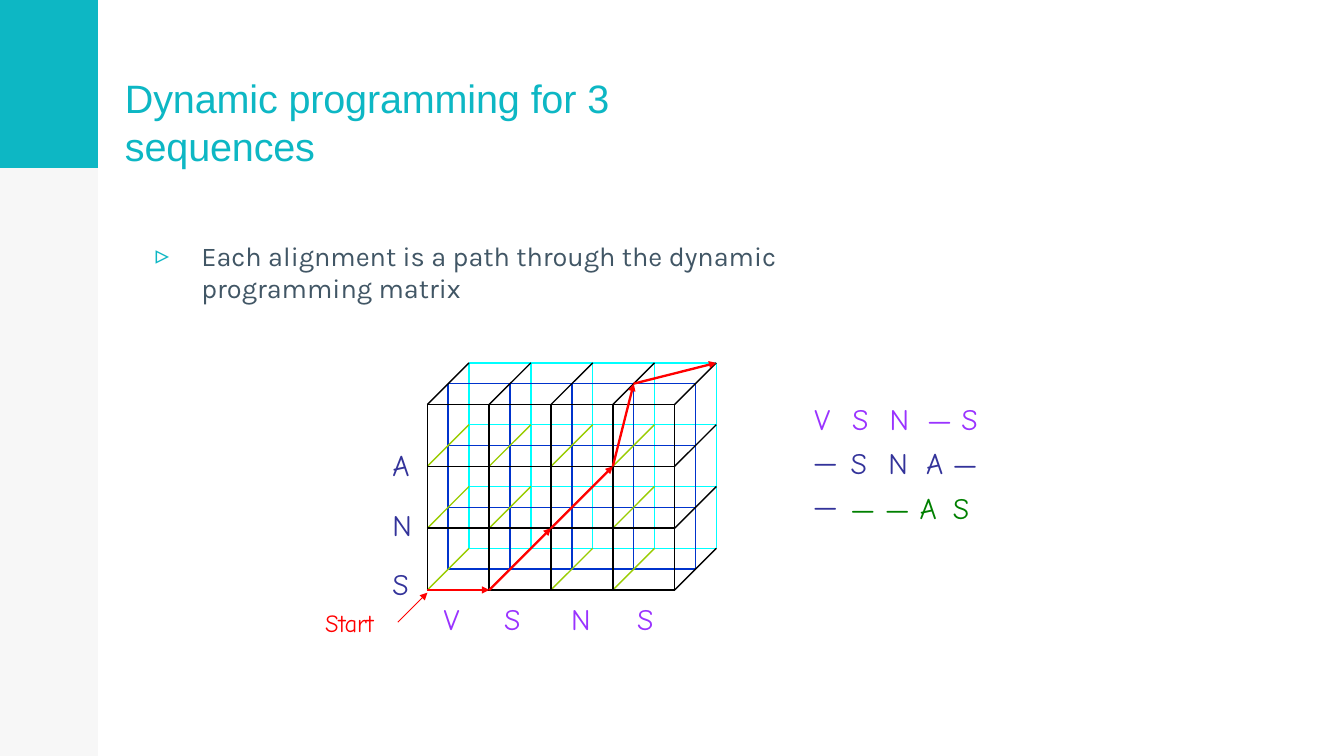
from lxml.etree import SubElement
from pptx import Presentation
from pptx.dml.color import RGBColor
from pptx.enum.shapes import MSO_CONNECTOR as CONN, MSO_SHAPE as SHAPE
from pptx.enum.text import MSO_ANCHOR as ANCHOR, PP_ALIGN as ALIGN
from pptx.oxml.ns import qn
from pptx.util import Inches, Pt

W = 10
H = W * 9 / 16
TEAL, SLATE, RED, BLACK = "0DB7C4", "415665", "FF0000", "000000"
PURPLE, INDIGO, GREEN = "9A33FF", "33339A", "008000"
CYAN, BLUE, LIME = "00FFFF", "0033CC", "99CC00"
HAND = "Comic Neue"


def rgb(color):
    return RGBColor.from_string(color)


def add_rect(slide, box, color, alpha=None):
    sp = slide.shapes.add_shape(SHAPE.RECTANGLE, *map(Inches, box))
    sp.shadow.inherit = False
    sp.fill.solid()
    sp.fill.fore_color.rgb = rgb(color)
    sp.line.fill.background()
    if alpha:
        clr = sp.fill._xPr.find(".//" + qn("a:srgbClr"))
        SubElement(clr, qn("a:alpha")).set("val", str(alpha * 1000))


def add_line(slide, start, end, color, width=0.75, arrow=False):
    ln = slide.shapes.add_connector(CONN.STRAIGHT, *map(Inches, start + end))
    ln.line.color.rgb = rgb(color)
    ln.line.width = Pt(width)
    if arrow:
        head = SubElement(ln.line._get_or_add_ln(), qn("a:tailEnd"))
        for key, val in (("type", "triangle"), ("w", "sm"), ("len", "sm")):
            head.set(key, val)
    SubElement(ln._element.spPr, qn("a:effectLst"))


def add_text_frame(slide, box, insets=(0, 0, 0, 0)):
    tf = slide.shapes.add_textbox(*map(Inches, box)).text_frame
    tf.word_wrap = True
    tf.margin_left, tf.margin_top, tf.margin_right, tf.margin_bottom = map(Inches, insets)
    return tf


def format_paragraph(p, margin=0.01, indent=None, bullet=None, tabs=()):
    """Set indents, a (character, colour, font) bullet and left tab stops."""
    ppr = p._p.get_or_add_pPr()
    ppr.set("marL", str(Inches(margin)))
    if indent:
        ppr.set("indent", str(Inches(indent)))
    if bullet:
        char, color, font = bullet
        SubElement(SubElement(ppr, qn("a:buClr")), qn("a:srgbClr")).set("val", color)
        SubElement(ppr, qn("a:buFont")).set("typeface", font)
        SubElement(ppr, qn("a:buChar")).set("char", char)
    if tabs:
        stops = SubElement(ppr, qn("a:tabLst"))
        for pos in tabs:
            stop = SubElement(stops, qn("a:tab"))
            stop.set("pos", str(Inches(pos)))
            stop.set("algn", "l")


def add_run(p, text, size, font, color, spacing=0):
    r = p.add_run()
    r.text = text
    r.font.size, r.font.name = Pt(size), font
    r.font.color.rgb = rgb(color)
    if spacing:
        r._r.get_or_add_rPr().set("spc", str(round(spacing * 100)))


def draw_sidebar(slide, box):
    x, y, w, h = box
    add_rect(slide, box, BLACK, alpha=3)
    add_rect(slide, (x, y, w, h / 4.5), TEAL)


def write_title(slide, box):
    tf = add_text_frame(slide, box, (0, 0.18, 0, 0))
    tf.vertical_anchor = ANCHOR.BOTTOM
    p = tf.paragraphs[0]
    format_paragraph(p)
    for text, spacing in (("Dynamic programming ", -0.1), ("fo", -0.2), ("r 3 sequences", -0.1)):
        add_run(p, text, 21.2, "Arial", TEAL, spacing)


def write_body(slide, box):
    p = add_text_frame(slide, box, (0.1,) * 4).paragraphs[0]
    format_paragraph(p, 0.48, -0.34, ("▹", TEAL, "Karla"))
    add_run(p, "Each alignment is a path through the dynamic programming matrix",
            14.5, "Karla", SLATE)


def draw_matrix(slide, box):
    """Draw a 4 x 3 x 2 lattice and the alignment path through it."""
    x, y, w, h = box
    cols, rows, layers = 4, 3, 2
    cell = w - h
    depth = (h - rows * cell) / layers

    def node(i, j, k):
        return x + i * cell + k * depth, y + h - j * cell - k * depth

    def draw_layer(k, color):
        for i in range(cols + 1):
            add_line(slide, node(i, 0, k), node(i, rows, k), color)
        for j in range(rows + 1):
            add_line(slide, node(0, j, k), node(cols, j, k), color)

    draw_layer(2, CYAN)
    draw_layer(1, BLUE)
    for i in range(cols + 1):
        for j in range(rows + 1):
            color = BLACK if i == cols or j == rows else LIME
            add_line(slide, node(i, j, layers), node(i, j, 0), color)
    draw_layer(0, BLACK)

    path = [(0, 0, 0), (1, 0, 0), (2, 1, 0), (3, 2, 0), (3, 3, 1), (4, 3, 2)]
    for a, b in zip(path, path[1:]):
        add_line(slide, node(*a), node(*b), RED, 1.25, arrow=True)


def label_matrix(slide, box):
    """Label the axes and the start corner of the matrix in box."""
    x, y, w, h = box
    bottom = y + h
    p = add_text_frame(slide, (x + 0.11, bottom + 0.08, 1.61, 0.27)).paragraphs[0]
    format_paragraph(p, tabs=(0.45, 0.95, 1.44))
    add_run(p, "V\tS\tN\tS", 15.9, HAND, PURPLE, -0.1)

    p = add_text_frame(slide, (x - 0.27, bottom - 1.24, 0.19, 1.34)).paragraphs[0]
    format_paragraph(p)
    p.alignment, p.line_spacing = ALIGN.JUSTIFY, 1.67
    add_run(p, "A ", 15.9, HAND, INDIGO)
    add_run(p, "N S", 15.9, HAND, INDIGO, -0.1)

    add_line(slide, (x - 0.22, bottom + 0.24), (x, bottom + 0.02), RED, 0.5, arrow=True)
    p = add_text_frame(slide, (x - 0.77, bottom + 0.13, 0.5, 0.22)).paragraphs[0]
    format_paragraph(p)
    add_run(p, "Start", 13.2, HAND, RED, -0.1)


def write_alignment(slide, box):
    gap = ("—", INDIGO, HAND)
    rows = [
        (PURPLE, None, (0.28, 0.56, 0.84),
         [("V\tS\tN\t", -0.1), ("— ", -0.2), ("S", 0)]),
        (INDIGO, gap, (0.28, 0.56, 0.84, 1.11),
         [("S\t", 0), ("N", -0.1), ("\tA\t", 0), ("—", -0.2)]),
        (GREEN, gap, (0.29, 1.11),
         [("— — A\tS", 0)]),
    ]
    tf = add_text_frame(slide, box)
    for n, (color, bullet, tabs, runs) in enumerate(rows):
        p = tf.add_paragraph() if n else tf.paragraphs[0]
        margin, indent = (0.28, -0.28) if bullet else (0.01, None)
        format_paragraph(p, margin, indent, bullet, tabs)
        if n:
            p.space_before = Pt(4.8)
        for text, spacing in runs:
            add_run(p, text, 15.9, HAND, color, spacing)


def main():
    prs = Presentation()
    prs.slide_width, prs.slide_height = Inches(W), Inches(H)
    slide = prs.slides.add_slide(prs.slide_layouts[6])
    left = 0.092 * W
    matrix = (3.18, 2.7, 2.15, 1.69)
    draw_sidebar(slide, (0, 0, 0.073 * W, H))
    write_title(slide, (left, 0.01, 3.89, 1.25))
    write_body(slide, (left, 1.68, 5.65, 3.71))
    write_alignment(slide, (6.05, 2.98, 1.32, 0.94))
    draw_matrix(slide, matrix)
    label_matrix(slide, matrix)
    prs.save("out.pptx")


if __name__ == "__main__":
    main()
